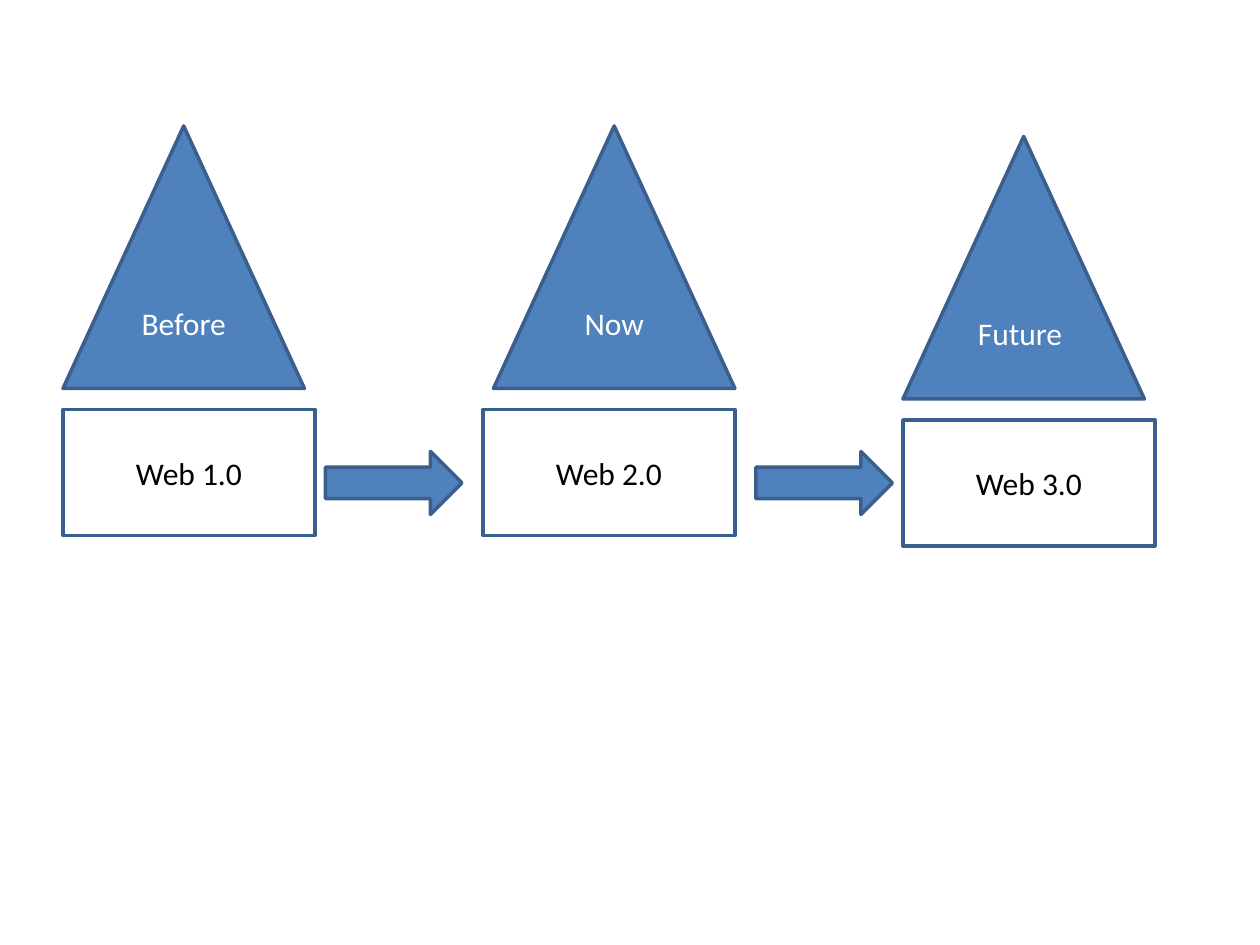
from dataclasses import dataclass

from pptx import Presentation
from pptx.dml.color import RGBColor
from pptx.enum.shapes import MSO_SHAPE
from pptx.enum.text import MSO_ANCHOR, PP_ALIGN
from pptx.util import Inches, Pt


@dataclass(frozen=True)
class Theme:
    blue: str = "4F81BD"
    edge: str = "3A5F8C"
    white: str = "FFFFFF"
    black: str = "000000"
    font: str = "Calibri"
    size: int = 18
    line: int = 2


class Deck:
    """Places shapes on a grid of twelve cells to the inch."""

    def __init__(self, theme):
        self.theme = theme
        self.deck = Presentation()
        self.deck.slide_width, self.deck.slide_height = Inches(10), Inches(7.5)
        self.cell = Inches(1) // 12
        self.slide = self.deck.slides.add_slide(self.deck.slide_layouts[6])

    def shape(self, kind, col, row, wide, high, fill):
        spot = [n * self.cell for n in (col, row, wide, high)]
        item = self.slide.shapes.add_shape(kind, *spot)
        item.shadow.inherit = False
        item.fill.solid()
        item.fill.fore_color.rgb = RGBColor.from_string(fill)
        item.line.color.rgb = RGBColor.from_string(self.theme.edge)
        item.line.width = Pt(self.theme.line)
        return item

    def label(self, item, text, color):
        frame = item.text_frame
        frame.text = text
        para = frame.paragraphs[0]
        font = para.runs[0].font
        font.color.rgb = RGBColor.from_string(color)
        formats = (
            (frame, {"word_wrap": True, "vertical_anchor": MSO_ANCHOR.MIDDLE}),
            (para, {"alignment": PP_ALIGN.CENTER}),
            (font, {"name": self.theme.font, "size": Pt(self.theme.size)}),
        )
        for part, values in formats:
            for name, value in values.items():
                setattr(part, name, value)

    def box(self, col, row, text):
        item = self.shape(MSO_SHAPE.RECTANGLE, col, row, 24, 12, self.theme.white)
        self.label(item, text, self.theme.black)

    def peak(self, col, row, text):
        item = self.shape(MSO_SHAPE.ISOSCELES_TRIANGLE, col, row, 23, 25,
                          self.theme.blue)
        self.label(item, text, self.theme.white)

    def arrow(self, col, row):
        self.shape(MSO_SHAPE.RIGHT_ARROW, col, row, 13, 6, self.theme.blue)


def main():
    page = Deck(Theme())

    # Stages: box column, peak column, top row, era, version
    stages = (
        (6, 6, 12, "Before", "Web 1.0"),
        (46, 47, 12, "Now", "Web 2.0"),
        (86, 86, 13, "Future ", "Web 3.0"),
    )
    for left, tip, top, era, web in stages:
        page.box(left, top + 27, web)
        page.peak(tip, top, era)

    # Arrows between the stages
    for col in (31, 72):
        page.arrow(col, 43)

    page.deck.save("out.pptx")


if __name__ == "__main__":
    main()
